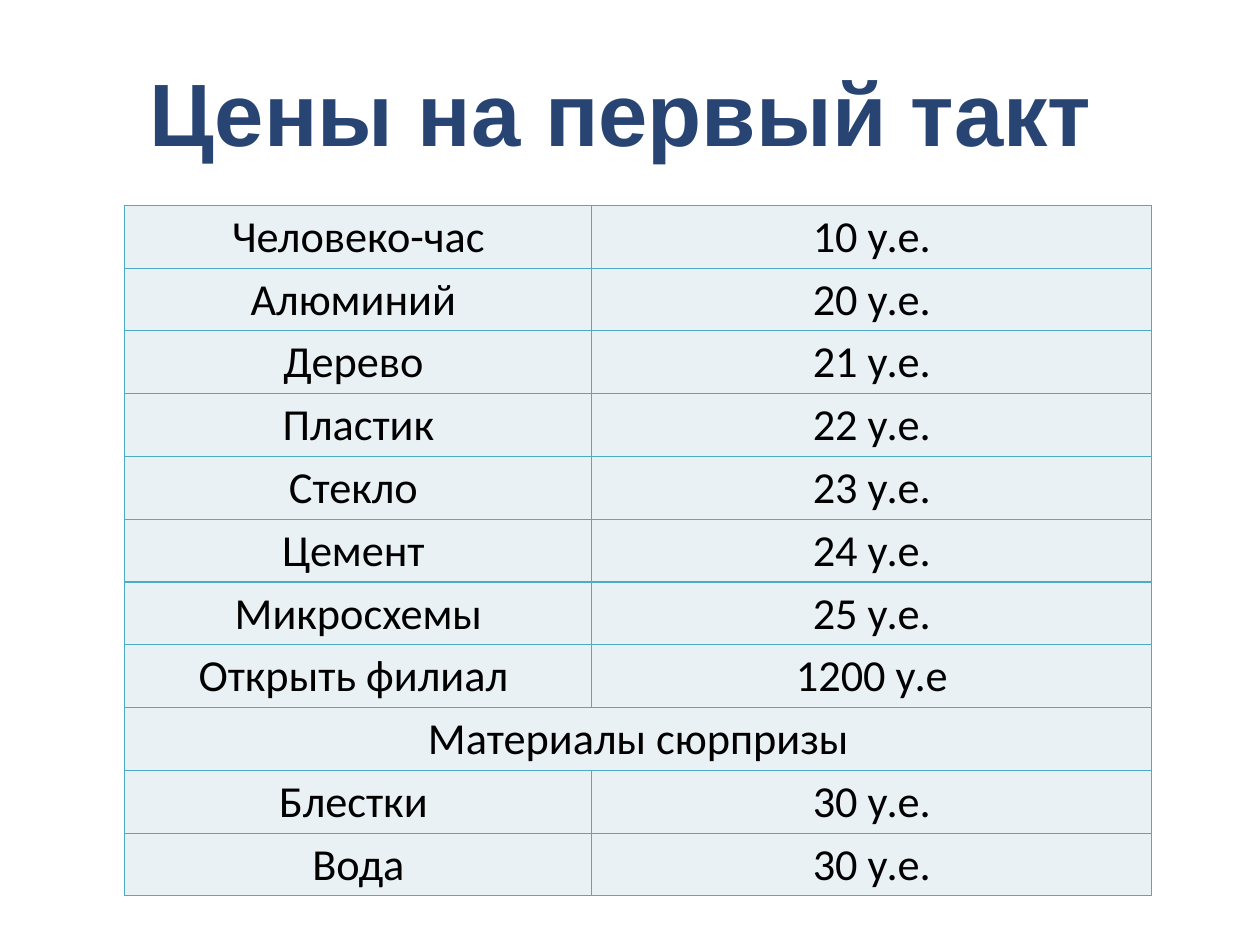
from lxml import etree
from pptx import Presentation
from pptx import util as u
from pptx.dml import color
from pptx.enum import text
from pptx.oxml import ns

PRICES = [
    ("Человеко-час", "10 у.е."),
    ("Алюминий ", "20 у.е."),
    ("Дерево ", "21 у.е."),
    ("Пластик", "22 у.е."),
    ("Стекло ", "23 у.е."),
    ("Цемент ", "24 у.е."),
    ("Микросхемы", "25 у.е."),
    ("Открыть филиал ", "1200 у.е"),
    ("Материалы сюрпризы",),
    ("Блестки ", "30 у.е."),
    ("Вода", "30 у.е."),
]
TITLE_FONT = {"name": "Arial", "size": u.Pt(72), "bold": True}
CELL_FONT = {"name": "Calibri", "size": u.Pt(36), "bold": False}
TITLE_FRAME = {
    "word_wrap": True,
    "auto_size": text.MSO_AUTO_SIZE.NONE,
    "vertical_anchor": text.MSO_ANCHOR.MIDDLE,
    "margin_left": u.Cm(0.36),
    "margin_right": u.Cm(0.36),
    "margin_top": u.Cm(0.18),
    "margin_bottom": u.Cm(0.18),
}
CELL_FRAME = {
    "vertical_anchor": text.MSO_ANCHOR.MIDDLE,
    "margin_left": u.Cm(0.03),
    "margin_right": u.Cm(0.03),
    "margin_top": u.Cm(0.03),
    "margin_bottom": 0,
}


def set_attrs(obj, values):
    """Set every attribute listed in a dict of format values."""
    for name, value in values.items():
        setattr(obj, name, value)


def paint(fmt, hex_color):
    """Give a fill a solid colour from a hex string."""
    fmt.solid()
    fmt.fore_color.rgb = color.RGBColor.from_string(hex_color)


def write(tf, words, font, hex_color):
    """Write one centred run into a text frame."""
    p = tf.paragraphs[0]
    p.alignment = text.PP_ALIGN.CENTER
    r = p.add_run()
    r.text = words
    set_attrs(r.font, font)
    paint(r.font.fill, hex_color)


def add_borders(cell, hex_color, width):
    """Draw all four borders of a table cell."""
    tc_pr = cell._tc.get_or_add_tcPr()
    for side in ("lnL", "lnR", "lnT", "lnB"):
        ln = etree.SubElement(tc_pr, ns.qn(f"a:{side}"), w=str(width))
        fill = etree.SubElement(ln, ns.qn("a:solidFill"))
        etree.SubElement(fill, ns.qn("a:srgbClr"), val=hex_color)


def add_title(s, words, left, top, width, height):
    """Place and format the slide title in its box."""
    sp = s.shapes.title
    set_attrs(sp, {"left": left, "top": top, "width": width, "height": height})
    set_attrs(sp.text_frame, TITLE_FRAME)
    write(sp.text_frame, words, TITLE_FONT, "284473")


def add_prices(s, rows, left, top, width, height):
    """Place the price table, merging rows that hold a single heading."""
    table = s.shapes.add_table(len(rows), 2, left, top, width, height).table
    table.first_row = table.horz_banding = False
    table.columns[0].width = u.Cm(13.39)
    table.columns[1].width = width - u.Cm(13.39)
    for i, row in enumerate(rows):
        table.rows[i].height = height // len(rows)
        for cell in table.rows[i].cells:
            set_attrs(cell, CELL_FRAME)
            add_borders(cell, "4BACC6", u.Pt(1))
            paint(cell.fill, "E9F1F5")
        if len(row) == 1:
            table.cell(i, 0).merge(table.cell(i, 1))
        for j, words in enumerate(row):
            write(table.cell(i, j).text_frame, words, CELL_FONT, "000000")


def main():
    """Build the price slide and save it."""
    prs = Presentation()
    set_attrs(prs, {"slide_width": u.Cm(36.12), "slide_height": u.Cm(27.1)})
    s = prs.slides.add_slide(prs.slide_layouts[5])
    paint(s.background.fill, "FFFFFF")
    add_title(s, "Цены на первый такт ", u.Cm(2.72), u.Cm(0.79), u.Cm(30.84), u.Cm(4.78))
    add_prices(s, PRICES, u.Cm(3.58), u.Cm(5.89), u.Cm(29.44), u.Cm(19.8))
    prs.save("out.pptx")


if __name__ == "__main__":
    main()
